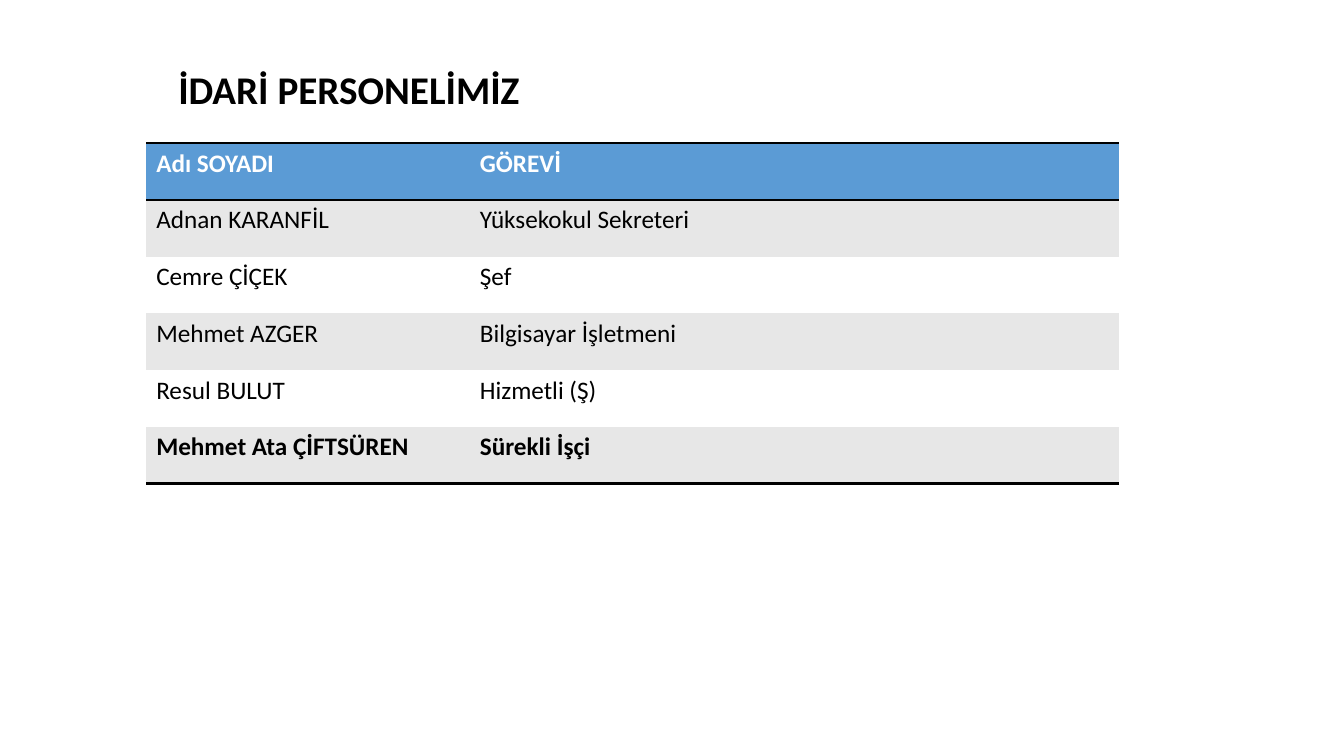
from lxml.etree import SubElement
from pptx import Presentation
from pptx.dml.color import RGBColor
from pptx.enum.text import MSO_ANCHOR
from pptx.oxml.ns import qn
from pptx.util import Inches, Pt

WIDE, HIGH = 13.33, 7.5
BLACK, WHITE, BLUE, GRAY = "000000", "FFFFFF", "5B9BD5", "E7E7E7"
COLS = (3.21, 6.44)
ROW = 3.38 / 6
STAFF = [
    ("Adı SOYADI", "GÖREVİ"),
    ("Adnan KARANFİL", "Yüksekokul Sekreteri"),
    ("Cemre ÇİÇEK", "Şef"),
    ("Mehmet AZGER", "Bilgisayar İşletmeni"),
    ("Resul BULUT", "Hizmetli (Ş)"),
    ("Mehmet Ata ÇİFTSÜREN", "Sürekli İşçi"),
]


def color(code):
    return RGBColor.from_string(code)


def write(frame, text, size=18, ink=BLACK, bold=False, lead=None):
    para = frame.paragraphs[0]
    para.line_spacing = lead
    run = para.add_run()
    run.text = text
    font = run.font
    font.name, font.size, font.bold = "Calibri", Pt(size), bold
    font.color.rgb = color(ink)


def border(cell, side, ruled):
    line = SubElement(cell._tc.get_or_add_tcPr(), qn(f"a:ln{side}"))
    if ruled:
        line.set("w", str(Pt(2)))
        fill = SubElement(line, qn("a:solidFill"))
        SubElement(fill, qn("a:srgbClr")).set("val", BLACK)
    else:
        line.set("w", "0")
        SubElement(line, qn("a:noFill"))


def add_title(slide, text):
    box = slide.shapes.add_textbox(
        Inches(1.67), Inches(0.4), Inches(8.08), Inches(1.02))
    frame = box.text_frame
    frame.word_wrap = True
    frame.vertical_anchor = MSO_ANCHOR.MIDDLE
    write(frame, text, size=28, bold=True, lead=0.9)


def add_staff(slide, rows):
    last = len(rows) - 1
    grid = slide.shapes.add_table(
        len(rows), len(COLS), Inches(1.45), Inches(1.42),
        Inches(sum(COLS)), Inches(ROW * len(rows))).table
    for col, width in zip(grid.columns, COLS):
        col.width = Inches(width)
    for r, row in enumerate(rows):
        grid.rows[r].height = Inches(ROW)
        head = r == 0
        for c, text in enumerate(row):
            cell = grid.cell(r, c)
            # Rules frame the header and close the table
            for side, ruled in (("L", False), ("R", False),
                                ("T", r <= 1), ("B", r in (0, last))):
                border(cell, side, ruled)
            # Blue header, then alternating bands
            cell.fill.solid()
            cell.fill.fore_color.rgb = color(
                BLUE if head else GRAY if r % 2 else WHITE)
            write(cell.text_frame, text, ink=WHITE if head else BLACK,
                  bold=r in (0, last))


def main():
    deck = Presentation()
    deck.slide_width, deck.slide_height = Inches(WIDE), Inches(HIGH)
    slide = deck.slides.add_slide(deck.slide_layouts[6])
    add_title(slide, "İDARİ PERSONELİMİZ")
    add_staff(slide, STAFF)
    deck.save("out.pptx")


if __name__ == "__main__":
    main()
